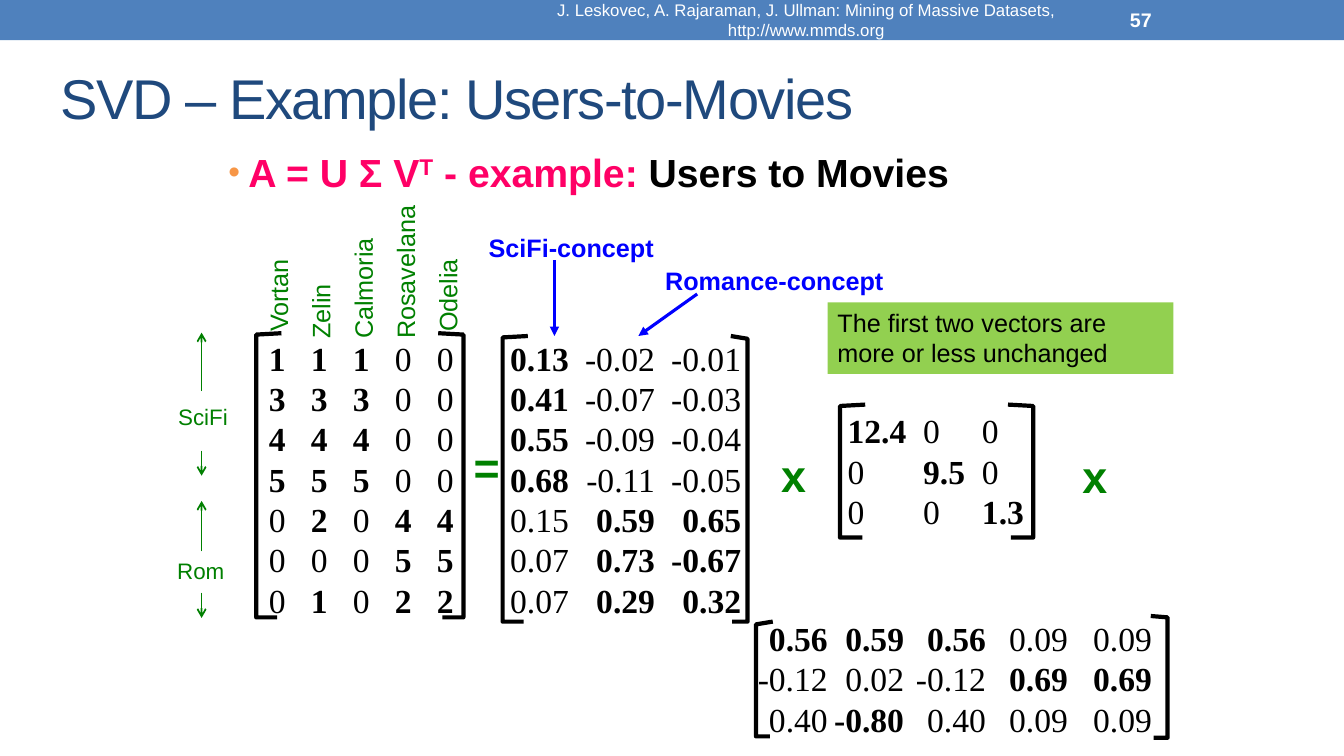
from dataclasses import dataclass
from typing import Any, Optional, Sequence

import lxml.etree
import pptx
import pptx.dml.color
import pptx.enum.shapes
import pptx.enum.text
import pptx.oxml.ns
import pptx.util

Pt = pptx.util.Pt
qn = pptx.oxml.ns.qn
Align = pptx.enum.text.PP_ALIGN
Anchor = pptx.enum.text.MSO_ANCHOR

COLORS = {
    "black": "000000", "white": "FFFFFF", "banner": "4F81BD", "title": "1F497D",
    "pink": "FF0066", "bullet": "F79646", "green": "008000", "blue": "0000FF",
    "note": "92D050",
}
SANS, SERIF = "Arial", "Times New Roman"
Box = tuple[float, float, float, float]


@dataclass
class Run:
    text: str
    bold: bool = False
    color: Optional[str] = None
    baseline: int = 0


@dataclass
class Label:
    text: str
    box: Box
    size: float
    color: str
    bold: bool = False


@dataclass
class Arrow:
    start: tuple[float, float]
    end: tuple[float, float]
    color: str
    width: float
    head: str


@dataclass
class Bracket:
    spine: float
    tip: float
    foot: float
    top: float
    bottom: float


@dataclass
class Matrix:
    """Rows of cells, bold where starred, set on tab stops aligned "l" or "r"."""
    box: Box
    inset: float
    align: str
    stops: Sequence[float]
    rows: Sequence[str]


LABELS = [
    Label("=", (331.2, 310.3, 33.1, 46.1), 32, "green", True),
    Label("x", (550.8, 316.1, 32.4, 46.1), 32, "green", True),
    Label("x", (766.1, 316.8, 32.4, 46.1), 32, "green", True),
    Label("SciFi", (120.2, 284.4, 50.4, 26.6), 16, "green"),
    Label("Rom", (119.5, 394.6, 49, 26.6), 16, "green"),
    Label("SciFi-concept", (342, 162, 133.9, 28.8), 18, "blue", True),
    Label("Romance-concept", (468, 185.8, 172.1, 28.8), 18, "blue", True),
]
ARROWS = [
    Arrow((144, 279.4), (144, 237.6), "green", 1.25, "arrow"),
    Arrow((144, 321.8), (144, 339.8), "green", 1.25, "arrow"),
    Arrow((144, 393.8), (144, 357.8), "green", 1.25, "arrow"),
    Arrow((144, 423.4), (144, 441.4), "green", 1.25, "arrow"),
    Arrow((396, 186), (396, 240), "blue", 2.25, "triangle"),
    Arrow((498, 210), (456, 240), "blue", 2.25, "triangle"),
]
BRACKETS = [
    Bracket(183, 201, 198, 237.6, 441.4),
    Bracket(331.2, 313.2, 316, 237.6, 441.4),
    Bracket(358.6, 376.6, 374.4, 239.8, 443.5),
    Bracket(534.2, 522, 523.4, 240.5, 444.2),
    Bracket(599.8, 617.8, 615.6, 289.4, 383.8),
    Bracket(738, 720, 722.2, 289.4, 383.8),
    Bracket(540, 552.2, 550, 444.5, 526.3),
    Bracket(833.8, 822.2, 823.7, 440, 527),
]
MATRICES = [
    Matrix((180, 237.6, 156, 211), 12, "l", (30, 60, 90, 120), (
        "*1 *1 *1 0 0", "*3 *3 *3 0 0", "*4 *4 *4 0 0", "*5 *5 *5 0 0",
        "0 *2 0 *4 *4", "0 0 0 *5 *5", "0 *1 0 *2 *2")),
    Matrix((347.8, 237.6, 198, 211), 7.2, "r", (51.5, 113, 174.5), (
        "*0.13 -0.02 -0.01", "*0.41 -0.07 -0.03", "*0.55 -0.09 -0.04",
        "*0.68 -0.11 -0.05", "0.15 *0.59 *0.65", "0.07 *0.73 *-0.67",
        "0.07 *0.29 *0.32")),
    Matrix((598.3, 289.4, 156, 94.3), 7.2, "l", (54, 96), (
        "*12.4 0 0", "0 *9.5 0", "0 0 *1.3")),
    Matrix((534.2, 437.8, 306, 94.3), 7.2, "r", (50, 104.5, 163, 221.5, 281.5), (
        "*0.56 *0.59 *0.56 0.09 0.09", "-0.12 0.02 -0.12 *0.69 *0.69",
        "0.40 *-0.80 0.40 0.09 0.09")),
]
MOVIE_INDENTS = {"Vortan": 5, "Zelin": 0, "Calmoria": 0, "Rosavelana": 0, "Odelia": 5}


def rgb(name: str) -> pptx.dml.color.RGBColor:
    return pptx.dml.color.RGBColor.from_string(COLORS[name])


def points(values: Sequence[float]) -> list[int]:
    return [Pt(value) for value in values]


def write_text(shape: Any, lines: Sequence[Sequence[Run]], *, size: float,
               color: str = "black", font: str = SANS, align: Any = Align.LEFT,
               anchor: Any = Anchor.TOP, wrap: bool = True, inset: float = 7.2,
               line_spacing: Optional[float] = None, spacing: int = 0) -> list[Any]:
    """Fill the shape with one paragraph per line and return the paragraphs."""
    frame = shape.text_frame
    frame.word_wrap = wrap
    frame.vertical_anchor = anchor
    frame.margin_left = Pt(inset)
    for index, line in enumerate(lines):
        paragraph = frame.add_paragraph() if index else frame.paragraphs[0]
        paragraph.alignment = align
        paragraph.line_spacing = line_spacing
        for item in line:
            run = paragraph.add_run()
            run.text = item.text
            run.font.name, run.font.size, run.font.bold = font, Pt(size), item.bold
            run.font.color.rgb = rgb(item.color or color)
            properties = run._r.get_or_add_rPr()
            if spacing:
                properties.set("spc", str(spacing))
            if item.baseline:
                properties.set("baseline", str(item.baseline))
    return list(frame.paragraphs)


def add_text(slide: Any, box: Box, lines: Sequence[Sequence[Run]], **text_format: Any) -> list[Any]:
    return write_text(slide.shapes.add_textbox(*points(box)), lines, **text_format)


def add_rectangle(slide: Any, box: Box, fill: str) -> Any:
    shape = slide.shapes.add_shape(pptx.enum.shapes.MSO_SHAPE.RECTANGLE, *points(box))
    shape.shadow.inherit = False
    shape.fill.solid()
    shape.fill.fore_color.rgb = rgb(fill)
    shape.line.fill.background()
    return shape


def add_bracket(slide: Any, bracket: Bracket) -> None:
    builder = slide.shapes.build_freeform(bracket.tip, bracket.top, scale=Pt(1))
    builder.add_line_segments([(bracket.spine, bracket.top + 1),
                               (bracket.spine, bracket.bottom),
                               (bracket.foot, bracket.bottom)], close=False)
    shape = builder.convert_to_shape()
    shape.shadow.inherit = False
    shape.fill.background()
    shape.line.color.rgb = rgb("black")
    shape.line.width = Pt(3)


def add_arrow(slide: Any, arrow: Arrow) -> None:
    connector = slide.shapes.add_connector(
        pptx.enum.shapes.MSO_CONNECTOR.STRAIGHT, *points(arrow.start + arrow.end))
    connector.line.color.rgb = rgb(arrow.color)
    connector.line.width = Pt(arrow.width)
    lxml.etree.SubElement(connector.line._get_or_add_ln(), qn("a:tailEnd"), type=arrow.head)
    lxml.etree.SubElement(connector._element.spPr, qn("a:effectLst"))


def add_matrix(slide: Any, matrix: Matrix) -> None:
    lines = []
    for row in matrix.rows:
        runs = [Run(("\t" if column or matrix.align == "r" else "") + cell.lstrip("*"),
                    cell.startswith("*")) for column, cell in enumerate(row.split())]
        lines.append(runs)
    for paragraph in add_text(slide, matrix.box, lines, size=24, font=SERIF, inset=matrix.inset):
        tabs = lxml.etree.SubElement(paragraph._p.get_or_add_pPr(), qn("a:tabLst"))
        for stop in matrix.stops:
            lxml.etree.SubElement(tabs, qn("a:tab"), pos=str(Pt(stop)), algn=matrix.align)


def add_bullet(paragraph: Any) -> None:
    properties = paragraph._p.get_or_add_pPr()
    properties.set("marL", str(Pt(14.4)))
    properties.set("indent", str(-Pt(14.4)))
    color = lxml.etree.SubElement(properties, qn("a:buClr"))
    lxml.etree.SubElement(color, qn("a:srgbClr"), val=COLORS["bullet"])
    lxml.etree.SubElement(properties, qn("a:buSzPct"), val="85000")
    lxml.etree.SubElement(properties, qn("a:buFont"), typeface=SANS)
    lxml.etree.SubElement(properties, qn("a:buChar"), char="•")


def add_movie_names(slide: Any) -> None:
    box = slide.shapes.add_textbox(*points((198.7, 115.9, 110.2, 156.2)))
    box.rotation = 270
    paragraphs = write_text(box, [[Run(movie)] for movie in MOVIE_INDENTS], size=18,
                            color="green", wrap=False, line_spacing=1.4)
    for paragraph, indent in zip(paragraphs, MOVIE_INDENTS.values()):
        paragraph._p.get_or_add_pPr().set("marL", str(Pt(indent)))


def main() -> None:
    presentation = pptx.Presentation()
    presentation.slide_width, presentation.slide_height = Pt(960), Pt(540)
    slide = presentation.slides.add_slide(presentation.slide_layouts[6])

    add_rectangle(slide, (0, 0, 960, 28.8), "banner")
    add_text(slide, (36, 30.2, 648, 77.8), [[Run("SVD – Example: Users-to-Movies")]],
             size=40, color="title", anchor=Anchor.MIDDLE, spacing=-100)
    heading = [Run("A = U Σ V", True), Run("T", True, baseline=30000),
               Run(" - example: ", True), Run("Users to Movies", True, "black")]
    add_bullet(add_text(slide, (156, 102.2, 648, 92.2), [heading], size=28, color="pink")[0])
    source = "J. Leskovec, A. Rajaraman, J. Ullman: Mining of Massive Datasets, http://www.mmds.org"
    add_text(slide, (360, 1.4, 432, 25.9), [[Run(source)]], size=12, color="white",
             align=Align.CENTER, anchor=Anchor.MIDDLE)
    add_text(slide, (800, 1.4, 112.3, 25.9), [[Run("57", True)]], size=14, color="white",
             anchor=Anchor.MIDDLE)

    for bracket in BRACKETS:
        add_bracket(slide, bracket)
    add_movie_names(slide)
    for matrix in MATRICES:
        add_matrix(slide, matrix)
    for label in LABELS:
        add_text(slide, label.box, [[Run(label.text, label.bold)]], size=label.size,
                 color=label.color, anchor=Anchor.MIDDLE, wrap=False)
    for arrow in ARROWS:
        add_arrow(slide, arrow)
    note = add_rectangle(slide, (591.1, 216, 247, 51.1), "note")
    write_text(note, [[Run("The first two vectors are more or less unchanged")]], size=18)

    presentation.save("out.pptx")


if __name__ == "__main__":
    main()
